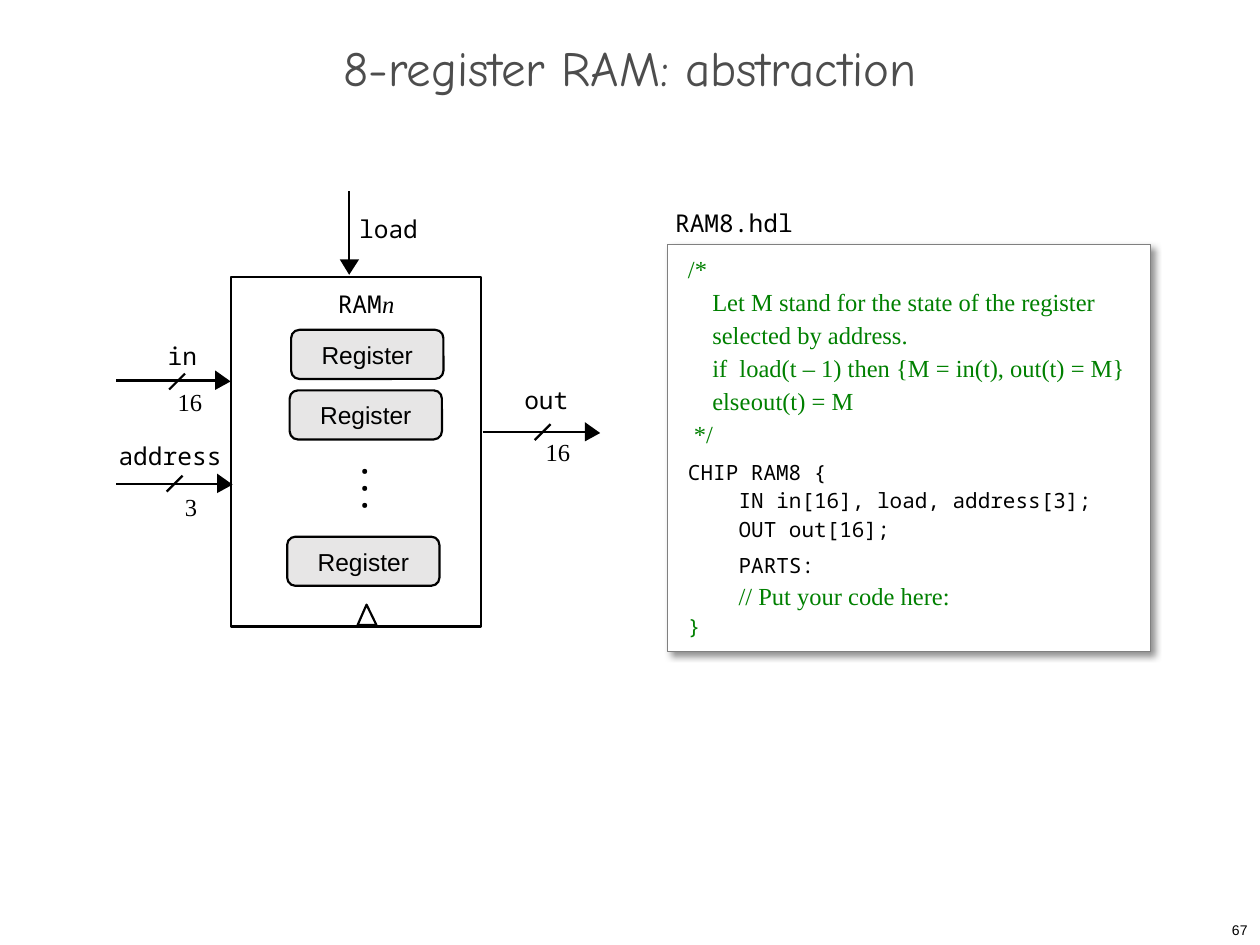
from pptx import Presentation
from pptx.dml.color import RGBColor
from pptx.enum.shapes import MSO_CONNECTOR as LineKind, MSO_SHAPE as Preset
from pptx.enum.text import MSO_ANCHOR as Anchor, PP_ALIGN as Align
from pptx.oxml import parse_xml
from pptx.oxml.ns import nsdecls
from pptx.util import Cm, Pt

BLACK = RGBColor(0x00, 0x00, 0x00)
WHITE = RGBColor(0xFF, 0xFF, 0xFF)
TITLE_GRAY = RGBColor(0x4D, 0x4D, 0x4D)
FRAME_GRAY = RGBColor(0x80, 0x80, 0x80)
REGISTER_GRAY = RGBColor(0xE7, 0xE6, 0xE6)
COMMENT_GREEN = RGBColor(0x00, 0x80, 0x00)

MONO, SERIF, SANS = "Noto Sans Mono", "Times New Roman", "Arial"
LINE = Pt(1.25)


def write(paragraph, text, **font_format):
    run = paragraph.add_run()
    run.text = text
    color = font_format.pop("color", BLACK)
    for name, value in font_format.items():
        setattr(run.font, name, value)
    run.font.color.rgb = color


def add_text(left, top, width, height, margins=(0, 0), **frame_format):
    """Add a text box; margins are (horizontal, vertical) in cm."""
    box = slide.shapes.add_textbox(Cm(left), Cm(top), Cm(width), Cm(height))
    across, down = margins
    settings = {"word_wrap": True, "margin_left": Cm(across), "margin_right": Cm(across),
                "margin_top": Cm(down), "margin_bottom": Cm(down), **frame_format}
    for name, value in settings.items():
        setattr(box.text_frame, name, value)
    return box


prs = Presentation()
prs.slide_width, prs.slide_height = Cm(25.4), Cm(19.05)
slide = prs.slides.add_slide(prs.slide_layouts[6])
shapes = slide.shapes

# Title and page number
title = add_text(0, 0.86, 25.4, 1.27, (0.25, 0.13), vertical_anchor=Anchor.MIDDLE)
heading = title.text_frame.paragraphs[0]
heading.alignment, heading.line_spacing = Align.CENTER, 0.7
write(heading, "8-register RAM: abstraction", name="Comic Neue", size=Pt(28), color=TITLE_GRAY)

page = add_text(20.12, 18.42, 5.28, 0.64, (0.25, 0.13), vertical_anchor=Anchor.MIDDLE)
page.text_frame.paragraphs[0].alignment = Align.RIGHT
write(page.text_frame.paragraphs[0], "67", name=SANS, size=Pt(8))

# HDL listing
code_panel = shapes.add_shape(Preset.RECTANGLE, Cm(13.46), Cm(4.93), Cm(9.73), Cm(8.2))
code_panel.fill.solid()
code_panel.fill.fore_color.rgb = WHITE
code_panel.line.color.rgb = FRAME_GRAY
code_panel.line.width = Pt(0.75)
code_panel._element.spPr.append(parse_xml(
    f'<a:effectLst {nsdecls("a")}><a:outerShdw blurRad="{Pt(4)}" dist="{Pt(3)}" dir="2700000" '
    'algn="tl" rotWithShape="0"><a:srgbClr val="000000"><a:alpha val="43000"/></a:srgbClr>'
    '</a:outerShdw></a:effectLst>'))

code = code_panel.text_frame
frame_format = {"word_wrap": True, "vertical_anchor": Anchor.TOP, "margin_left": Cm(0.41),
                "margin_right": Cm(0.41), "margin_top": Cm(0.2), "margin_bottom": 0}
for name, value in frame_format.items():
    setattr(code, name, value)

COMMENT = {"name": SERIF, "size": Pt(14), "color": COMMENT_GREEN}
HDL = {"name": MONO, "size": Pt(12)}
code_lines = [  # text, first-line indent in cm, space before in pt, font
    ("/*", 0, 2, COMMENT),
    ("Let M stand for the state of the register", 0.49, 2, COMMENT),
    ("selected by address.", 0.49, 2, COMMENT),
    ("if  load(t – 1) then {M = in(t), out(t) = M}", 0.49, 2, COMMENT),
    ("else\tout(t) = M", 0.49, 2, COMMENT),
    ("*/", 0.12, 2, COMMENT),
    ("CHIP RAM8 {", 0, 6, HDL),
    ("IN in[16], load, address[3];", 1.02, 2, HDL),
    ("OUT out[16];", 1.02, 2, HDL),
    ("PARTS:", 1.02, 6, HDL),
    ("// Put your code here:", 1.02, 2, COMMENT),
    ("}", 0, 2, {**HDL, "color": COMMENT_GREEN}),
]
for number, (text, indent, space, font) in enumerate(code_lines):
    paragraph = code.add_paragraph() if number else code.paragraphs[0]
    paragraph.alignment = Align.LEFT
    paragraph.space_before = Pt(space)
    properties = paragraph._p.get_or_add_pPr()
    properties.set("marL", "0")
    properties.set("indent", str(Cm(indent)))
    if "\t" in text:
        properties.append(parse_xml(
            f'<a:tabLst {nsdecls("a")}><a:tab pos="{Cm(6.56)}" algn="l"/></a:tabLst>'))
    write(paragraph, text, **font)

file_name = add_text(13.36, 4.06, 5.33, 1.14, (0.25, 0.13))
write(file_name.text_frame.paragraphs[0], "RAM8.hdl", name=MONO, size=Pt(14))

# RAM chip with its registers
chip = shapes.add_shape(Preset.RECTANGLE, Cm(4.65), Cm(5.59), Cm(5.05), Cm(7.04))
chip.shadow.inherit = False
chip.fill.background()
chip.line.color.rgb = BLACK
chip.line.width = LINE

for left, top in [(5.87, 6.65), (5.84, 7.87), (5.79, 10.82)]:
    register = shapes.add_shape(Preset.ROUNDED_RECTANGLE, Cm(left), Cm(top), Cm(3.07), Cm(0.99))
    register.shadow.inherit = False
    register.fill.solid()
    register.fill.fore_color.rgb = REGISTER_GRAY
    register.line.color.rgb = BLACK
    register.line.width = LINE
    register.text_frame.vertical_anchor = Anchor.MIDDLE
    register.text_frame.paragraphs[0].alignment = Align.CENTER
    write(register.text_frame.paragraphs[0], "Register", name=SANS, size=Pt(14))

dots = add_text(6.55, 9.98, 1.96, 0.69)
dots.rotation = 90
write(dots.text_frame.paragraphs[0], "...", name=MONO, size=Pt(16), bold=True)

chip_name = add_text(6.81, 5.82, 1.52, 0.61).text_frame.paragraphs[0]
write(chip_name, "RAM", name=MONO, size=Pt(14))
write(chip_name, "n", name=SERIF, size=Pt(14), italic=True)

# Wires, with a slash across each bus
wires = [
    (2.34, 7.67, 4.34, 7.67),
    (2.34, 9.75, 4.42, 9.75),
    (9.73, 8.71, 11.84, 8.71),
    (7.04, 3.86, 7.04, 5.31),
]
slashes = [(x - 0.16, y + 0.16, x + 0.16, y - 0.16)
           for x, y in [(3.57, 7.69), (3.52, 9.75), (10.94, 8.71)]]
for ends in wires + slashes:
    wire = shapes.add_connector(LineKind.STRAIGHT, *map(Cm, ends))
    wire.line.color.rgb = BLACK
    wire.line.width = LINE
    wire._element.spPr.append(parse_xml(f'<a:effectLst {nsdecls("a")}/>'))

# Arrowheads and clock mark
heads = [[(x, y), (x + 0.31, y + 0.22), (x, y + 0.39)]
         for x, y in [(4.34, 7.47), (4.38, 9.55), (11.79, 8.51)]]
heads.append([(7.24, 5.23), (7.04, 5.54), (6.85, 5.23)])
clock = [(7.59, 12.6), (7.21, 12.6), (7.39, 12.19)]
for corners in heads + [clock]:
    start, *others = [(Cm(x), Cm(y)) for x, y in corners]
    builder = shapes.build_freeform(*start)
    builder.add_line_segments(others, close=True)
    triangle = builder.convert_to_shape()
    triangle.shadow.inherit = False
    triangle.fill.solid()
    if corners is clock:
        triangle.fill.fore_color.rgb = WHITE
        triangle.line.color.rgb = BLACK
        triangle.line.width = LINE
    else:
        triangle.fill.fore_color.rgb = BLACK
        triangle.line.fill.background()

# Pin names and bus widths
pin_labels = [
    ("load", 7.24, 4.32, 1.6, MONO),
    ("in", 3.38, 6.88, 1.02, MONO),
    ("address", 2.39, 8.89, 2.13, MONO),
    ("out", 10.57, 7.77, 0.99, MONO),
    ("16", 3.58, 7.8, 0.74, SERIF),
    ("3", 3.73, 9.91, 0.74, SERIF),
    ("16", 11, 8.81, 0.74, SERIF),
]
for text, left, top, width, font in pin_labels:
    label = add_text(left, top, width, 0.61)
    write(label.text_frame.paragraphs[0], text, name=font, size=Pt(14))

prs.save("out.pptx")
